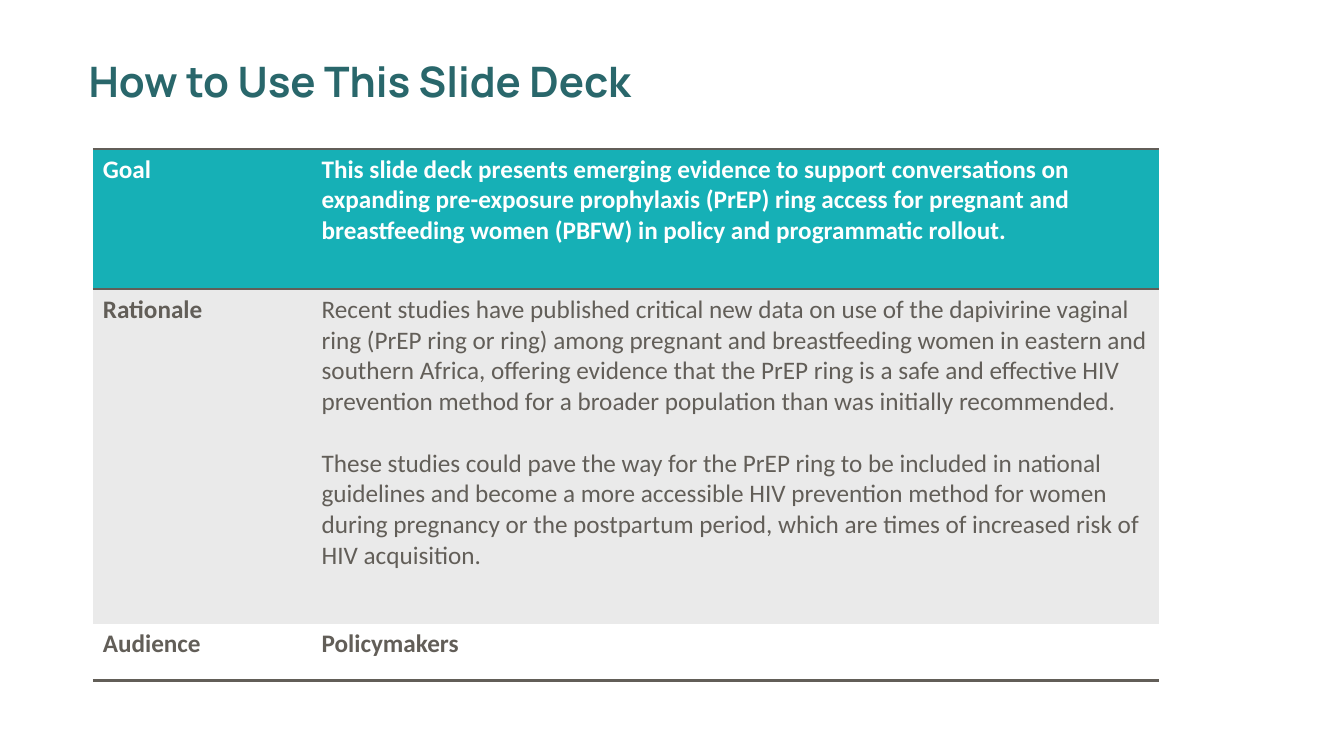
from lxml import etree
from pptx import Presentation
from pptx.dml.color import RGBColor
from pptx.enum.text import MSO_ANCHOR
from pptx.oxml.ns import qn
from pptx.util import Inches, Pt

TITLE = "How to Use This Slide Deck"
TEAL, DARK_TEAL, TEXT_GREY = "16B0B6", "29676B", "625E58"
LIGHT_GREY, WHITE = "EAEAEA", "FFFFFF"
NO_STYLE_NO_GRID = "{2D5ABB26-0587-4C30-8999-92F81FD0307C}"

# label, paragraphs, bold paragraphs, row height, fill, text colour, ruled edges
ROWS = [
    ("Goal",
     ["This slide deck presents emerging evidence to support conversations on "
      "expanding pre-exposure prophylaxis (PrEP) ring access for pregnant and "
      "breastfeeding women (PBFW) in policy and programmatic rollout."],
     True, 1.39, TEAL, WHITE, ("lnT", "lnB")),
    ("Rationale",
     ["Recent studies have published critical new data on use of the dapivirine "
      "vaginal ring (PrEP ring or ring) among pregnant and breastfeeding women in "
      "eastern and southern Africa, offering evidence that the PrEP ring is a safe "
      "and effective HIV prevention method for a broader population than was "
      "initially recommended.",
      "These studies could pave the way for the PrEP ring to be included in "
      "national guidelines and become a more accessible HIV prevention method for "
      "women during pregnancy or the postpartum period, which are times of "
      "increased risk of HIV acquisition."],
     False, 3.32, LIGHT_GREY, TEXT_GREY, ()),
    ("Audience", ["Policymakers"], True, 0.56, WHITE, TEXT_GREY, ("lnB",)),
]
COLUMN_WIDTHS = (2.17, 8.41)


def color(hex_code):
    return RGBColor.from_string(hex_code)


def set_font(paragraph, name, size, hex_code, bold):
    font = paragraph.font
    font.name, font.size, font.bold = name, Pt(size), bold
    font.color.rgb = color(hex_code)


def add_rule(cell, edge):
    """Draw one cell edge; call before the fill is set, top before bottom."""
    properties = cell._tc.get_or_add_tcPr()
    line = etree.SubElement(properties, qn("a:" + edge), w=str(Pt(2)))
    fill = etree.SubElement(line, qn("a:solidFill"))
    etree.SubElement(fill, qn("a:srgbClr"), val=TEXT_GREY)


def fill_cell(cell, texts, bold, fill, text_color, edges):
    for edge in edges:
        add_rule(cell, edge)
    cell.fill.solid()
    cell.fill.fore_color.rgb = color(fill)
    frame = cell.text_frame
    for index, text in enumerate(texts):
        paragraph = frame.add_paragraph() if index else frame.paragraphs[0]
        paragraph.text = text
        set_font(paragraph, "Calibri", 18, text_color, bold)
        if index:
            paragraph.space_before = Pt(22)


def add_title(slide):
    box = slide.shapes.add_textbox(Inches(0), Inches(0.21), Inches(11.5), Inches(1.25))
    frame = box.text_frame
    frame.word_wrap = True
    frame.vertical_anchor = MSO_ANCHOR.MIDDLE
    frame.margin_left = Inches(0.88)
    paragraph = frame.paragraphs[0]
    paragraph.text = TITLE
    paragraph.line_spacing = 0.9
    set_font(paragraph, "Manrope", 30, DARK_TEAL, True)


def add_guide_table(slide):
    height = sum(row[3] for row in ROWS)
    table = slide.shapes.add_table(
        len(ROWS), len(COLUMN_WIDTHS), Inches(0.92), Inches(1.48),
        Inches(sum(COLUMN_WIDTHS)), Inches(height)).table
    table.horz_banding = False
    table._tbl.tblPr.find(qn("a:tableStyleId")).text = NO_STYLE_NO_GRID
    for column, width in zip(table.columns, COLUMN_WIDTHS):
        column.width = Inches(width)
    for index, (label, texts, bold, row_height, *look) in enumerate(ROWS):
        table.rows[index].height = Inches(row_height)
        fill_cell(table.cell(index, 0), [label], True, *look)
        fill_cell(table.cell(index, 1), texts, bold, *look)


def main():
    presentation = Presentation()
    presentation.slide_width = Inches(13.33)
    presentation.slide_height = Inches(7.5)
    slide = presentation.slides.add_slide(presentation.slide_layouts[6])
    add_title(slide)
    add_guide_table(slide)
    presentation.save("out.pptx")


if __name__ == "__main__":
    main()
